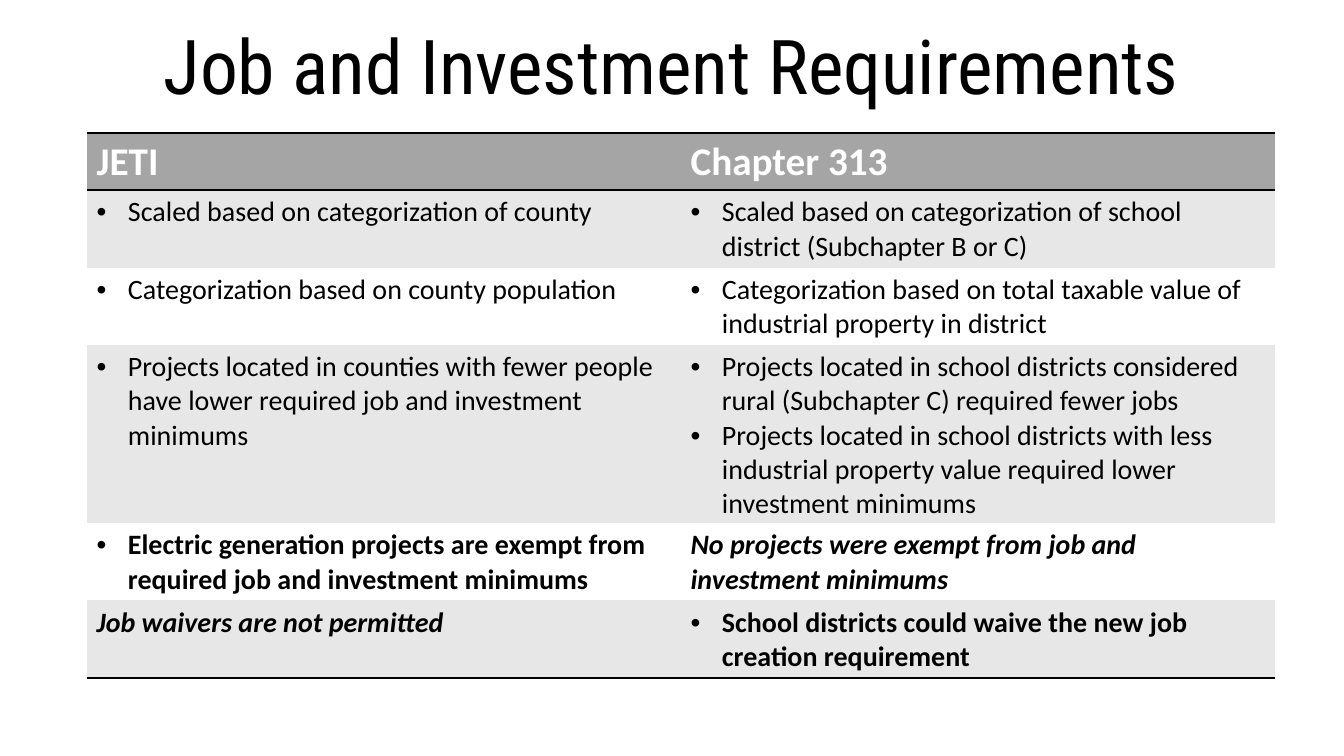
from dataclasses import dataclass

from lxml.etree import SubElement
from pptx import Presentation
from pptx.dml.color import RGBColor
from pptx.enum.text import MSO_AUTO_SIZE, PP_ALIGN
from pptx.oxml.ns import qn
from pptx.slide import Slide
from pptx.table import _Cell
from pptx.text.text import _Paragraph
from pptx.util import Cm, Pt


@dataclass(frozen=True)
class Theme:
    title_font: str = "Roboto Condensed"
    body_font: str = "Calibri"
    bullet_font: str = "Arial"
    ink: str = "000000"
    header_ink: str = "FFFFFF"
    header_fill: str = "A5A5A5"
    band_fills: tuple[str, str] = ("E7E7E7", "FFFFFF")
    title_size: int = 54
    header_size: int = 28
    body_size: int = 20
    rule_width: int = 2
    no_grid_style: str = "{2D5ABB26-0587-4C30-8999-92F81FD0307C}"


@dataclass(frozen=True)
class Entry:
    points: tuple[str, ...]
    bullet: bool = True
    bold: bool = False
    italic: bool = False


@dataclass(frozen=True)
class Requirement:
    height: float
    jeti: Entry
    chapter_313: Entry


THEME = Theme()
HEADER_HEIGHT = 1.44
PROGRAM_WIDTH = 14.97
BULLET_INDENT = Cm(0.79)
PROGRAMS = ("JETI", "Chapter 313")
REQUIREMENTS = (
    Requirement(
        1.95,
        Entry(("Scaled based on categorization of county",)),
        Entry(("Scaled based on categorization of school district (Subchapter B or C)",)),
    ),
    Requirement(
        1.95,
        Entry(("Categorization based on county population",)),
        Entry(("Categorization based on total taxable value of industrial property in district",)),
    ),
    Requirement(
        4.49,
        Entry(("Projects located in counties with fewer people have lower required job and investment minimums",)),
        Entry((
            "Projects located in school districts considered rural (Subchapter C) required fewer jobs",
            "Projects located in school districts with less industrial property value required lower investment minimums",
        )),
    ),
    Requirement(
        1.95,
        Entry(("Electric generation projects are exempt from required job and investment minimums",), bold=True),
        Entry(("No projects were exempt from job and investment minimums",), bullet=False, bold=True, italic=True),
    ),
    Requirement(
        1.95,
        Entry(("Job waivers are not permitted",), bullet=False, bold=True, italic=True),
        Entry(("School districts could waive the new job creation requirement",), bold=True),
    ),
)


def style_text(paragraph: _Paragraph, face: str, size: int, color: str,
               bold: bool = False, italic: bool = False) -> None:
    for run in paragraph.runs:
        run.font.name = face
        run.font.size = Pt(size)
        run.font.color.rgb = RGBColor.from_string(color)
        run.font.bold = bold
        run.font.italic = italic


def add_bullet(paragraph: _Paragraph) -> None:
    properties = paragraph._p.get_or_add_pPr()
    properties.set("marL", str(BULLET_INDENT))
    properties.set("indent", str(-BULLET_INDENT))
    SubElement(properties, qn("a:buFont"), typeface=THEME.bullet_font)
    SubElement(properties, qn("a:buChar"), char="•")


def finish_cell(cell: _Cell, fill: str, rules: tuple[str, ...] = ()) -> None:
    properties = cell._tc.get_or_add_tcPr()
    for edge in rules:
        rule = SubElement(properties, qn(f"a:{edge}"), w=str(Pt(THEME.rule_width)))
        ink = SubElement(rule, qn("a:solidFill"))
        SubElement(ink, qn("a:srgbClr"), val=THEME.ink)
    cell.fill.solid()
    cell.fill.fore_color.rgb = RGBColor.from_string(fill)


def write_entry(cell: _Cell, entry: Entry) -> None:
    cell.text_frame.text = "\n".join(entry.points)
    for paragraph in cell.text_frame.paragraphs:
        style_text(paragraph, THEME.body_font, THEME.body_size, THEME.ink, entry.bold, entry.italic)
        if entry.bullet:
            add_bullet(paragraph)


def add_title(slide: Slide) -> None:
    title = slide.shapes.add_textbox(Cm(3.3), Cm(0.36), Cm(27.25), Cm(2.57)).text_frame
    title.word_wrap = False
    title.auto_size = MSO_AUTO_SIZE.SHAPE_TO_FIT_TEXT
    title.text = "Job and Investment Requirements"
    heading = title.paragraphs[0]
    heading.alignment = PP_ALIGN.CENTER
    style_text(heading, THEME.title_font, THEME.title_size, THEME.ink)


def add_comparison(slide: Slide) -> None:
    heights = [HEADER_HEIGHT, *(requirement.height for requirement in REQUIREMENTS)]
    comparison = slide.shapes.add_table(
        len(heights), len(PROGRAMS), Cm(2.18), Cm(3.35),
        Cm(PROGRAM_WIDTH * len(PROGRAMS)), Cm(sum(heights)),
    ).table
    comparison.horz_banding = False
    comparison._tbl.tblPr.find(qn("a:tableStyleId")).text = THEME.no_grid_style
    for row, height in zip(comparison.rows, heights):
        row.height = Cm(height)
    for column, program in enumerate(PROGRAMS):
        comparison.columns[column].width = Cm(PROGRAM_WIDTH)
        header = comparison.cell(0, column)
        header.text_frame.text = program
        style_text(header.text_frame.paragraphs[0], THEME.body_font, THEME.header_size,
                   THEME.header_ink, bold=True)
        finish_cell(header, THEME.header_fill, ("lnT", "lnB"))
    for index, requirement in enumerate(REQUIREMENTS):
        rules = ("lnB",) if index == len(REQUIREMENTS) - 1 else ()
        for column, entry in enumerate((requirement.jeti, requirement.chapter_313)):
            cell = comparison.cell(index + 1, column)
            write_entry(cell, entry)
            finish_cell(cell, THEME.band_fills[index % 2], rules)


def main() -> None:
    deck = Presentation()
    deck.slide_width = Cm(33.87)
    deck.slide_height = Cm(19.05)
    slide = deck.slides.add_slide(deck.slide_layouts[6])
    add_title(slide)
    add_comparison(slide)
    deck.save("out.pptx")


if __name__ == "__main__":
    main()
